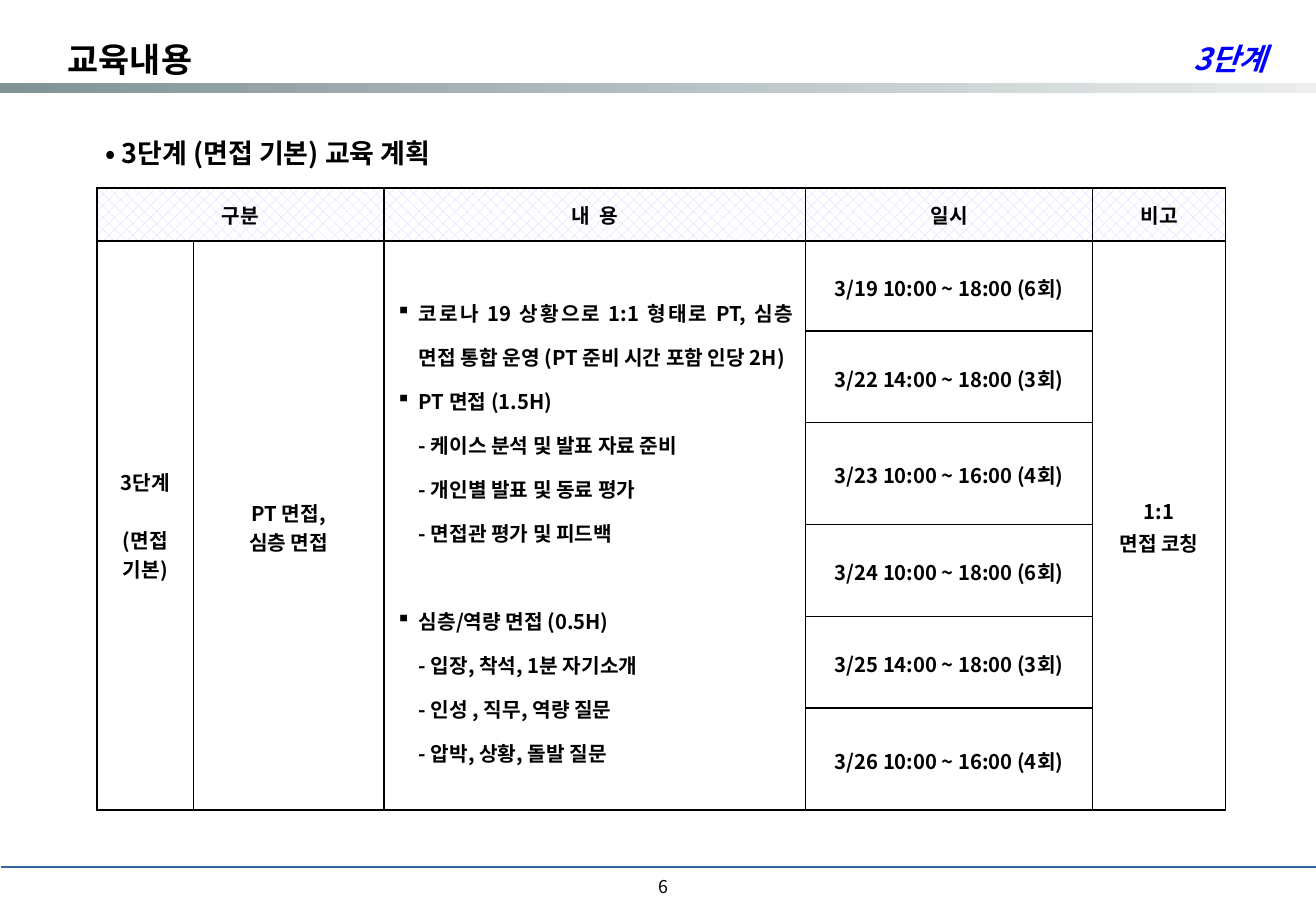
from dataclasses import dataclass

import lxml.etree
import pptx
import pptx.dml.color
import pptx.enum.dml
import pptx.enum.shapes
import pptx.enum.text
import pptx.oxml.ns
import pptx.slide
import pptx.table
import pptx.text.text
import pptx.util

Pt = pptx.util.Pt
Align = pptx.enum.text.PP_ALIGN
MIDDLE = pptx.enum.text.MSO_ANCHOR.MIDDLE
qn = pptx.oxml.ns.qn


@dataclass(frozen=True)
class Theme:
    font: str = "Noto Sans CJK KR"
    ink: str = "000000"
    blue: str = "0000FF"
    paper: str = "FFFFFF"
    rule: str = "336699"
    hatch: str = "CCCCFF"
    dark: str = "819295"
    light: str = "EBEDEE"
    title: float = 20
    stage: float = 18
    head: float = 16
    body: float = 12
    page: float = 10.5


THEME = Theme()


@dataclass(frozen=True)
class Line:
    text: str
    size: float = THEME.body
    color: str = THEME.ink
    bold: bool = True
    slant: bool = False
    align: Align = Align.CENTER
    space: float = 1.0
    before: float = 0
    left: float = 0
    mark: str = ""


@dataclass(frozen=True)
class Box:
    place: tuple[float, float, float, float]
    line: Line
    pad: float = 3.6


@dataclass(frozen=True)
class Block:
    row: int
    col: int
    lines: list[Line]
    rows: int = 1
    cols: int = 1


def rgb(code: str) -> pptx.dml.color.RGBColor:
    return pptx.dml.color.RGBColor.from_string(code)


def assign(thing: object, form: dict) -> None:
    for name, value in form.items():
        setattr(thing, name, value)


def write(frame: pptx.text.text.TextFrame, lines: list[Line]) -> None:
    for i, line in enumerate(lines):
        para = frame.add_paragraph() if i else frame.paragraphs[0]
        assign(para, {"alignment": line.align, "line_spacing": line.space,
                      "space_before": Pt(line.before)})
        props = para._p.get_or_add_pPr()
        props.set("marL", str(Pt(line.left)))
        props.set("indent", str(Pt(-line.left if line.mark else 0)))
        if line.mark:
            lxml.etree.SubElement(props, qn("a:buChar"), char=line.mark)
        run = para.add_run()
        assign(run, {"text": line.text})
        assign(run.font, {"name": THEME.font, "size": Pt(line.size),
                          "bold": line.bold, "italic": line.slant})
        run.font.color.rgb = rgb(line.color)
        lxml.etree.SubElement(run._r.get_or_add_rPr(), qn("a:ea"), typeface=THEME.font)


def fit(shape: object, box: Box) -> None:
    names = ("left", "top", "width", "height")
    assign(shape, {name: Pt(v) for name, v in zip(names, box.place)})
    assign(shape.text_frame, {
        "word_wrap": True, "auto_size": pptx.enum.text.MSO_AUTO_SIZE.NONE,
        "vertical_anchor": MIDDLE, "margin_left": Pt(7.2), "margin_right": Pt(7.2),
        "margin_top": Pt(box.pad), "margin_bottom": Pt(box.pad)})
    write(shape.text_frame, [box.line])


def frame_cell(cell: pptx.table._Cell, head: bool) -> None:
    props = cell._tc.get_or_add_tcPr()
    for side in ("lnL", "lnR", "lnT", "lnB"):
        edge = lxml.etree.SubElement(props, qn("a:" + side), w=str(Pt(1)))
        fill = lxml.etree.SubElement(edge, qn("a:solidFill"))
        lxml.etree.SubElement(fill, qn("a:srgbClr"), val=THEME.ink)
    if head:
        cell.fill.patterned()
        cell.fill.pattern = pptx.enum.dml.MSO_PATTERN.PERCENT_30
        cell.fill.fore_color.rgb = rgb(THEME.hatch)
        cell.fill.back_color.rgb = rgb(THEME.paper)
    else:
        cell.fill.solid()
        cell.fill.fore_color.rgb = rgb(THEME.paper)
    assign(cell, {"vertical_anchor": MIDDLE, "margin_left": Pt(7.2), "margin_right": Pt(7.2),
                  "margin_top": Pt(3), "margin_bottom": Pt(3)})


def item(text: str, before: float = 0, align: Align = Align.LEFT) -> Line:
    return Line(text, align=align, space=1.5, before=before, left=13.5, mark="▪")


def sub(text: str) -> Line:
    return Line(text, align=Align.LEFT, space=1.5, left=13.5)


# Slide content
TITLE = Box((33, 16.5, 412, 34), Line("교육내용", THEME.title, align=Align.LEFT, space=1.1), 7.2)
BOXES = [
    Box((503, 16.5, 255, 34), Line("3단계", THEME.stage, THEME.blue, slant=True,
                                   align=Align.RIGHT, space=1.1), 7.2),
    Box((55.5, 77, 244, 27), Line("• 3단계 (면접 기본) 교육 계획", THEME.head, align=Align.LEFT)),
    Box((221, 511, 182, 29), Line("6", THEME.page, bold=False, align=Align.RIGHT)),
]
COLS = [57, 113, 250, 170, 79]
ROWS = [31.4, 53.4, 54.4, 60.4, 54.4, 54.4, 60.4]
DATES = ["3/19 10:00 ~ 18:00 (6회)", "3/22 14:00 ~ 18:00 (3회)", "3/23 10:00 ~ 16:00 (4회)",
         "3/24 10:00 ~ 18:00 (6회)", "3/25 14:00 ~ 18:00 (3회)", "3/26 10:00 ~ 16:00 (4회)"]
PLAN = [
    item("코로나 19 상황으로 1:1 형태로 PT, 심층 면접 통합 운영 (PT 준비 시간 포함 인당 2H)",
         align=Align.JUSTIFY),
    item("PT 면접 (1.5H)"),
    sub("- 케이스 분석 및 발표 자료 준비"),
    sub("- 개인별 발표 및 동료 평가"),
    sub("- 면접관 평가 및 피드백"),
    item("심층/역량 면접 (0.5H)", before=26),
    sub("- 입장, 착석, 1분 자기소개"),
    sub("- 인성 , 직무, 역량 질문"),
    sub("- 압박, 상황, 돌발 질문"),
]
BLOCKS = [
    Block(0, 0, [Line("구분")], cols=2),
    *(Block(0, col, [Line(text)]) for col, text in enumerate(["내  용", "일시", "비고"], 2)),
    Block(1, 0, [Line("3단계"), Line("(면접", before=17), Line("기본)")], rows=6),
    Block(1, 1, [Line("PT 면접,", space=1.1), Line("심층 면접")], rows=6),
    Block(1, 2, PLAN, rows=6),
    *(Block(row, 3, [Line(text, space=1.1)]) for row, text in enumerate(DATES, 1)),
    Block(1, 4, [Line("1:1", space=1.1), Line("면접 코칭", space=1.1)], rows=6),
]


# Top bar and footer rule
def draw_bars(slide: pptx.slide.Slide) -> None:
    bar = slide.shapes.add_shape(pptx.enum.shapes.MSO_SHAPE.RECTANGLE,
                                 Pt(0), Pt(49), Pt(780), Pt(6))
    bar.shadow.inherit = False
    bar.line.fill.background()
    bar.fill.gradient()
    bar.fill.gradient_angle = 0
    for stop, code in zip(bar.fill.gradient_stops, (THEME.dark, THEME.light)):
        stop.color.rgb = rgb(code)
    rule = slide.shapes.add_connector(pptx.enum.shapes.MSO_CONNECTOR.STRAIGHT,
                                      Pt(0.7), Pt(514), Pt(780), Pt(514))
    rule.line.width = Pt(0.75)
    rule.line.color.rgb = rgb(THEME.rule)
    lxml.etree.SubElement(rule._element.spPr, qn("a:effectLst"))


# Training plan
def draw_table(slide: pptx.slide.Slide) -> None:
    table = slide.shapes.add_table(len(ROWS), len(COLS), Pt(57.6), Pt(111.4),
                                   Pt(sum(COLS)), Pt(sum(ROWS))).table
    assign(table, {"first_row": False, "horz_banding": False})
    for col, width in zip(table.columns, COLS):
        col.width = Pt(width)
    for row, height in zip(table.rows, ROWS):
        row.height = Pt(height)
    for r in range(len(ROWS)):
        for c in range(len(COLS)):
            frame_cell(table.cell(r, c), r == 0)
    for block in BLOCKS:
        cell = table.cell(block.row, block.col)
        if block.rows * block.cols > 1:
            cell.merge(table.cell(block.row + block.rows - 1, block.col + block.cols - 1))
        write(cell.text_frame, block.lines)


def main() -> None:
    deck = pptx.Presentation()
    assign(deck, {"slide_width": Pt(780), "slide_height": Pt(540)})
    slide = deck.slides.add_slide(deck.slide_layouts.get_by_name("Title Only"))
    draw_bars(slide)
    fit(slide.shapes.title, TITLE)
    for box in BOXES:
        fit(slide.shapes.add_textbox(0, 0, 0, 0), box)
    draw_table(slide)
    deck.save("out.pptx")


if __name__ == "__main__":
    main()
